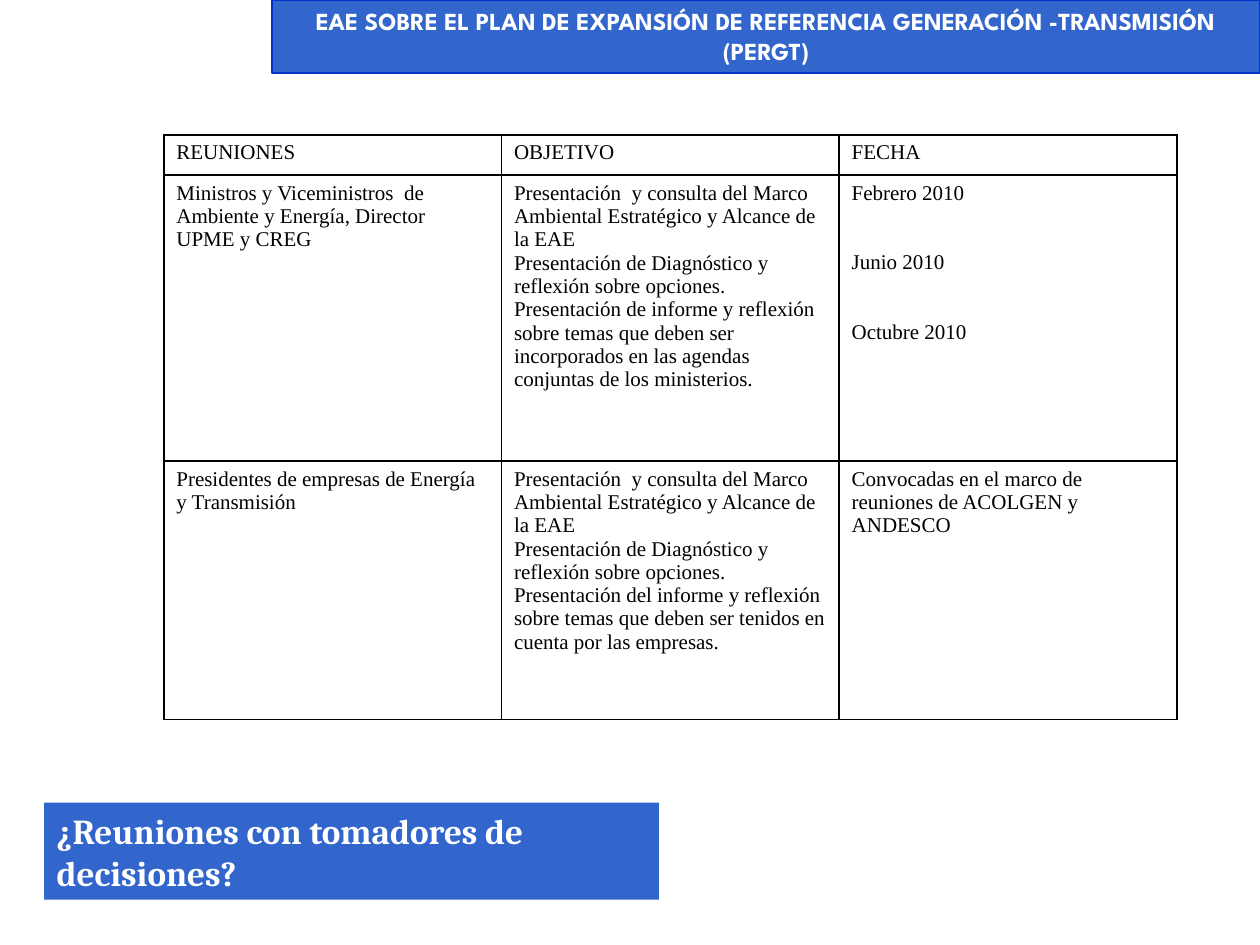
from lxml import etree
from pptx import Presentation
from pptx.dml.color import RGBColor
from pptx.enum import shapes, text
from pptx.oxml import ns
from pptx.util import Inches, Pt

BLUE = RGBColor(0x33, 0x66, 0xCC)
DARK_BLUE = RGBColor(0x00, 0x33, 0xCC)
WHITE = RGBColor(0xFF, 0xFF, 0xFF)
BLACK = RGBColor(0x00, 0x00, 0x00)

FRAMEWORK = "Presentación  y consulta del Marco Ambiental Estratégico y Alcance de la EAE"
DIAGNOSIS = "Presentación de Diagnóstico y reflexión sobre opciones."
MEETINGS = [
    [["REUNIONES"], ["OBJETIVO"], ["FECHA"]],
    [
        ["Ministros y Viceministros  de Ambiente y Energía, Director UPME y CREG"],
        [FRAMEWORK, DIAGNOSIS,
         "Presentación de informe y reflexión sobre temas que deben ser "
         "incorporados en las agendas conjuntas de los ministerios."],
        ["Febrero 2010", "Junio 2010", "Octubre 2010"],
    ],
    [
        ["Presidentes de empresas de Energía y Transmisión"],
        [FRAMEWORK, DIAGNOSIS,
         "Presentación del informe y reflexión sobre temas que deben ser "
         "tenidos en cuenta por las empresas."],
        ["Convocadas en el marco de reuniones de ACOLGEN y ANDESCO"],
    ],
]
ROW_HEIGHTS = (0.32, 2.27, 2.05)
COLUMN_WIDTH = 2.68
DATE_GAP = 26.6  # points, lines each date up with its objective


def add_run(paragraph, words, size, font, color, bold=False):
    run = paragraph.add_run()
    run.text = words
    run.font.size = Pt(size)
    run.font.name = font
    run.font.bold = bold
    run.font.color.rgb = color


def fill_band(band, words, size, font, align, anchor):
    """Blue band with bold white text."""
    band.fill.solid()
    band.fill.fore_color.rgb = BLUE
    frame = band.text_frame
    frame.word_wrap = True
    frame.auto_size = text.MSO_AUTO_SIZE.NONE
    frame.vertical_anchor = anchor
    frame.paragraphs[0].alignment = align
    add_run(frame.paragraphs[0], words, size, font, WHITE, bold=True)


def add_plan_banner(slide):
    banner = slide.shapes.add_shape(
        shapes.MSO_SHAPE.RECTANGLE, Inches(2.16), 0, Inches(7.84), Inches(0.58))
    banner.shadow.inherit = False
    banner.line.color.rgb = DARK_BLUE
    banner.line.width = Pt(0.75)
    fill_band(banner,
              "EAE SOBRE EL PLAN DE EXPANSIÓN DE REFERENCIA GENERACIÓN -TRANSMISIÓN (PERGT)",
              14, "League Spartan", text.PP_ALIGN.CENTER, text.MSO_ANCHOR.TOP)


def place_title(slide):
    title = slide.shapes.title
    title.left, title.top = Inches(0.35), Inches(6.37)
    title.width, title.height = Inches(4.88), Inches(0.77)
    fill_band(title, "¿Reuniones con tomadores de decisiones?",
              20, "Cambria", text.PP_ALIGN.LEFT, text.MSO_ANCHOR.MIDDLE)


def set_borders(cell):
    properties = cell._tc.get_or_add_tcPr()
    for side in ("lnL", "lnR", "lnT", "lnB"):
        line = etree.SubElement(properties, ns.qn(f"a:{side}"), w=str(Pt(1)))
        solid = etree.SubElement(line, ns.qn("a:solidFill"))
        etree.SubElement(solid, ns.qn("a:srgbClr"), val=str(BLACK))


def fill_cell(cell, lines, gap):
    set_borders(cell)
    cell.fill.background()
    frame = cell.text_frame
    for index, words in enumerate(lines):
        paragraph = frame.add_paragraph() if index else frame.paragraphs[0]
        if index and gap:
            paragraph.space_before = Pt(gap)
        add_run(paragraph, words, 12, "Times New Roman", BLACK)


def add_meetings_table(slide):
    columns = len(MEETINGS[0])
    meetings = slide.shapes.add_table(
        len(MEETINGS), columns, Inches(1.3), Inches(1.07),
        Inches(columns * COLUMN_WIDTH), Inches(sum(ROW_HEIGHTS))).table
    meetings.first_row = meetings.horz_banding = False
    for column in meetings.columns:
        column.width = Inches(COLUMN_WIDTH)
    for row, height, contents in zip(meetings.rows, ROW_HEIGHTS, MEETINGS):
        row.height = Inches(height)
        for index, (cell, lines) in enumerate(zip(row.cells, contents)):
            fill_cell(cell, lines, DATE_GAP if index == columns - 1 else 0)


def main():
    deck = Presentation()
    deck.slide_width, deck.slide_height = Inches(10), Inches(7.5)
    slide = deck.slides.add_slide(deck.slide_layouts[5])  # Title Only
    add_plan_banner(slide)
    place_title(slide)
    add_meetings_table(slide)
    deck.save("out.pptx")


if __name__ == "__main__":
    main()
